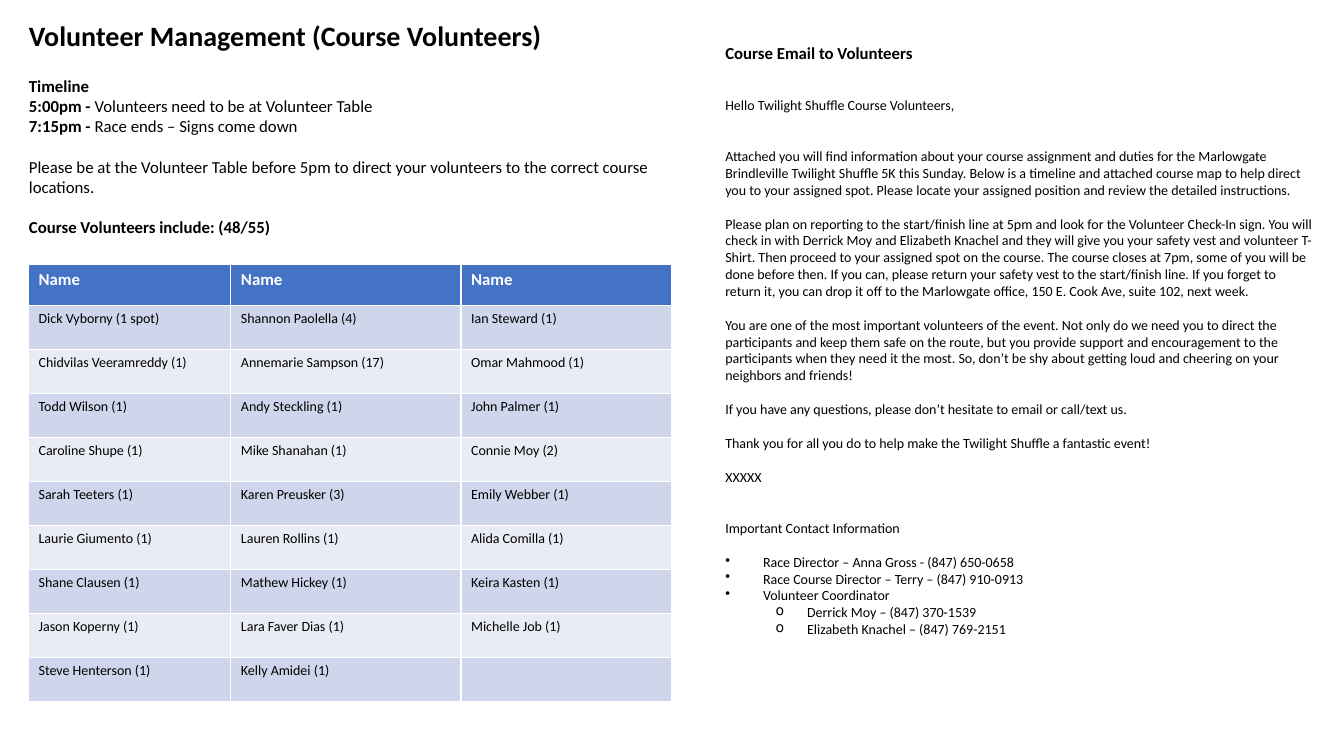
from lxml.etree import SubElement
from pptx import Presentation
from pptx.dml.color import RGBColor
from pptx.enum.text import MSO_AUTO_SIZE
from pptx.oxml.ns import qn
from pptx.util import Cm, Pt

BLACK = RGBColor(0x00, 0x00, 0x00)
WHITE = RGBColor(0xFF, 0xFF, 0xFF)
HEADER_BLUE = RGBColor(0x44, 0x72, 0xC4)
BAND_DARK = RGBColor(0xCF, 0xD5, 0xEA)
BAND_LIGHT = RGBColor(0xE9, 0xEB, 0xF5)

FORMATS = {
    "title": {"size": Pt(20), "bold": True},
    "strong": {"size": Pt(12), "bold": True},
    "plain": {"size": Pt(12), "bold": False},
    "small": {"size": Pt(10), "bold": False},
}
BULLETS = {
    "•": {"level": 0, "margin": Cm(0.95), "hanging": Cm(0.95)},
    "o": {"level": 1, "margin": Cm(2.06), "hanging": Cm(0.79)},
}


def add_run(paragraph, text, style, color=BLACK):
    run = paragraph.add_run()
    run.text = text
    run.font.name = "Calibri"
    run.font.color.rgb = color
    for attribute, value in FORMATS[style].items():
        setattr(run.font, attribute, value)


def add_text(slide, box, paragraphs):
    frame = slide.shapes.add_textbox(*box).text_frame
    frame.word_wrap = True
    frame.auto_size = MSO_AUTO_SIZE.SHAPE_TO_FIT_TEXT
    for index, (gap, bullet, runs) in enumerate(paragraphs):
        paragraph = frame.add_paragraph() if index else frame.paragraphs[0]
        paragraph.space_before = Pt(gap)
        for style, text in runs:
            add_run(paragraph, text, style)
        if bullet:
            layout = BULLETS[bullet]
            paragraph.level = layout["level"]
            properties = paragraph._p.get_or_add_pPr()
            properties.set("marL", str(layout["margin"]))
            properties.set("indent", str(-layout["hanging"]))
            SubElement(properties, qn("a:buChar")).set("char", bullet)


presentation = Presentation()
presentation.slide_width = Cm(33.87)
presentation.slide_height = Cm(19.05)
slide = presentation.slides.add_slide(presentation.slide_layouts[6])

volunteers = [
    ("Name", "Name", "Name"),
    ("Dick Vyborny (1 spot)", "Shannon Paolella (4)", "Ian Steward (1)"),
    ("Chidvilas Veeramreddy (1)", "Annemarie Sampson (17)", "Omar Mahmood (1)"),
    ("Todd Wilson (1)", "Andy Steckling (1)", "John Palmer (1)"),
    ("Caroline Shupe (1)", "Mike Shanahan (1)", "Connie Moy (2)"),
    ("Sarah Teeters (1)", "Karen Preusker (3)", "Emily Webber (1)"),
    ("Laurie Giumento (1)", "Lauren Rollins (1)", "Alida Comilla (1)"),
    ("Shane Clausen (1)", "Mathew Hickey (1)", "Keira Kasten (1)"),
    ("Jason Koperny (1)", "Lara Faver Dias (1)", "Michelle Job (1)"),
    ("Steve Henterson (1)", "Kelly Amidei (1)", ""),
]
table = slide.shapes.add_table(
    len(volunteers), 3, Cm(0.72), Cm(6.66), Cm(16.2), Cm(11.02)
).table
for column, width in zip(table.columns, (5.1, 5.8, 5.3)):
    column.width = Cm(width)
for row_index, names in enumerate(volunteers):
    is_header = row_index == 0
    table.rows[row_index].height = Cm(1.03 if is_header else 1.11)
    band = BAND_DARK if row_index % 2 else BAND_LIGHT
    for column_index, name in enumerate(names):
        cell = table.cell(row_index, column_index)
        cell.fill.solid()
        cell.fill.fore_color.rgb = HEADER_BLUE if is_header else band
        if name:
            style = "strong" if is_header else "small"
            color = WHITE if is_header else BLACK
            add_run(cell.text_frame.paragraphs[0], name, style, color)

timeline = [
    (0, None, [("title", "Volunteer Management (Course Volunteers)")]),
    (17, None, [("strong", "Timeline")]),
    (0, None, [("strong", "5:00pm - "), ("plain", "Volunteers need to be at Volunteer Table")]),
    (0, None, [("strong", "7:15pm - "), ("plain", "Race ends – Signs come down")]),
    (14.6, None, [("plain", "Please be at the Volunteer Table before 5pm to direct your "
                   "volunteers to the correct course locations.")]),
    (14.6, None, [("strong", "Course Volunteers include: (48/55)")]),
]
add_text(slide, (Cm(0.48), Cm(0.33), Cm(16.2), Cm(5.82)), timeline)

LINE = 12.2
email_body = [
    (2, None, "Hello Twilight Shuffle Course Volunteers,"),
    (2, None, "Attached you will find information about your course assignment and duties for "
     "the Marlowgate Brindleville Twilight Shuffle 5K this Sunday. Below is a timeline and "
     "attached course map to help direct you to your assigned spot. Please locate your "
     "assigned position and review the detailed instructions."),
    (1, None, "Please plan on reporting to the start/finish line at 5pm and look for the "
     "Volunteer Check-In sign. You will check in with Derrick Moy and Elizabeth Knachel and "
     "they will give you your safety vest and volunteer T-Shirt. Then proceed to your "
     "assigned spot on the course. The course closes at 7pm, some of you will be done before "
     "then. If you can, please return your safety vest to the start/finish line. If you "
     "forget to return it, you can drop it off to the Marlowgate office, 150 E. Cook Ave, "
     "suite 102, next week."),
    (1, None, "You are one of the most important volunteers of the event. Not only do we need "
     "you to direct the participants and keep them safe on the route, but you provide support "
     "and encouragement to the participants when they need it the most. So, don’t be shy "
     "about getting loud and cheering on your neighbors and friends!"),
    (1, None, "If you have any questions, please don’t hesitate to email or call/text us."),
    (1, None, "Thank you for all you do to help make the Twilight Shuffle a fantastic event!"),
    (1, None, "XXXXX"),
    (2, None, "Important Contact Information"),
    (1, "•", "Race Director – Anna Gross - (847) 650-0658"),
    (0, "•", "Race Course Director – Terry – (847) 910-0913"),
    (0, "•", "Volunteer Coordinator"),
    (0, "o", "Derrick Moy – (847) 370-1539"),
    (0, "o", "Elizabeth Knachel – (847) 769-2151"),
]
email = [(0, None, [("strong", "Course Email to Volunteers")])]
for blank_lines, bullet, text in email_body:
    email.append((blank_lines * LINE, bullet, [("small", text)]))
add_text(slide, (Cm(18.03), Cm(0.94), Cm(15.34), Cm(15.72)), email)

presentation.save("out.pptx")
